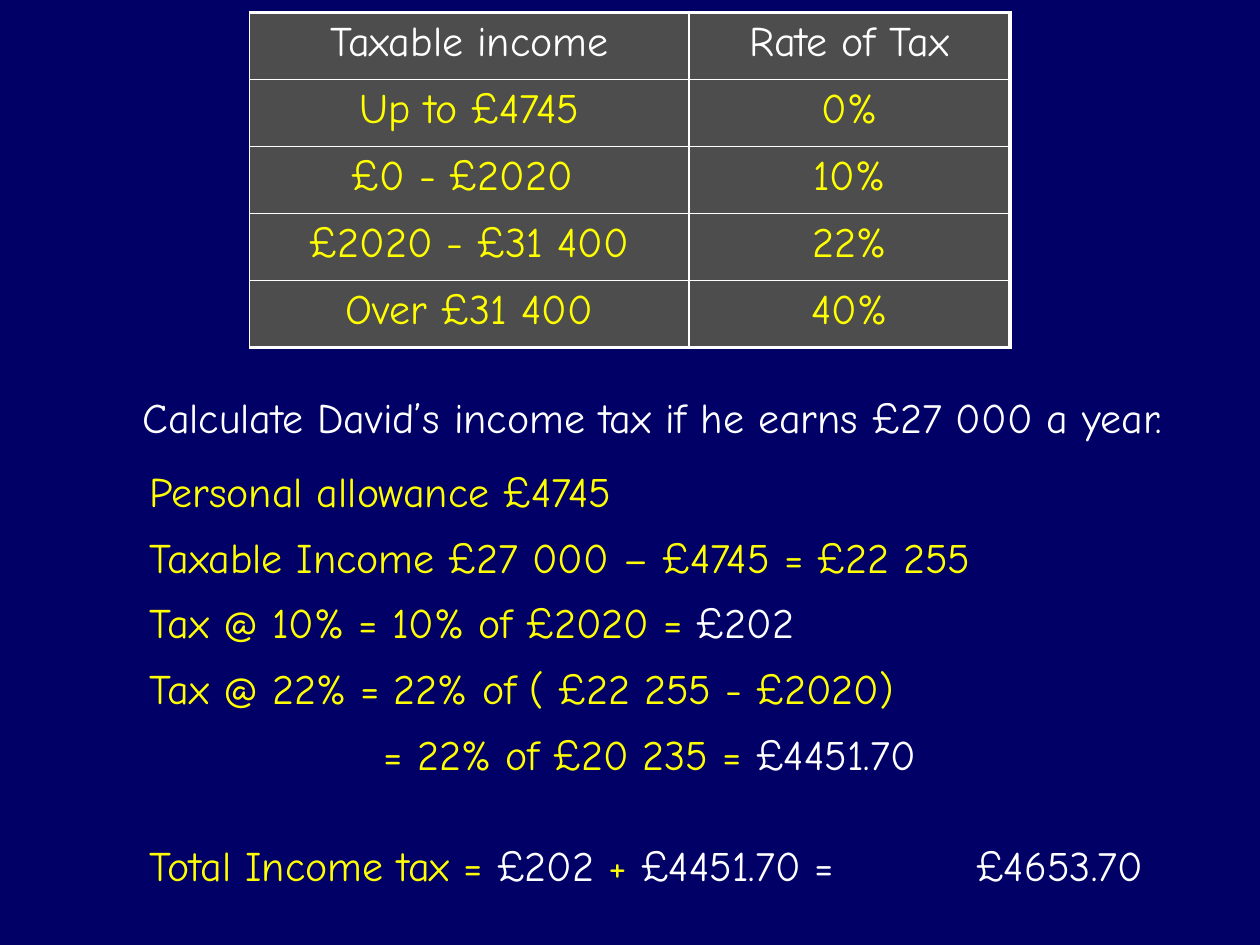
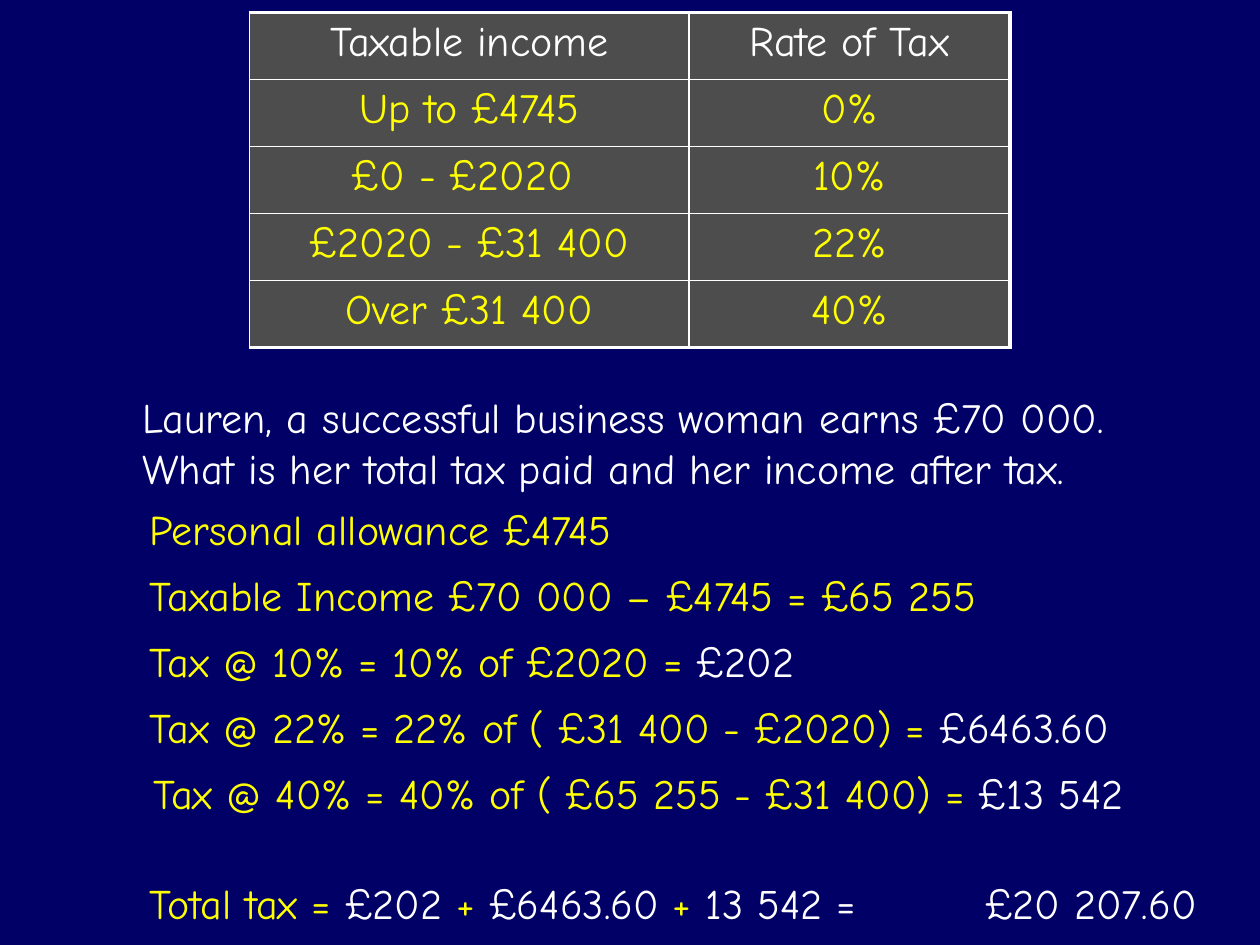
from typing import NamedTuple

from pptx import Presentation
from pptx.dml.color import RGBColor
from pptx.enum.text import MSO_AUTO_SIZE, PP_ALIGN
from pptx.oxml.ns import qn
from pptx.util import Cm, Pt
from lxml import etree

CENTER = PP_ALIGN.CENTER
LEFT = PP_ALIGN.LEFT
FIT_SHAPE = MSO_AUTO_SIZE.SHAPE_TO_FIT_TEXT

COLORS = {
    "background": "000066",
    "cell": "4D4D4D",
    "working": "FFFF00",
    "result": "FFFFFF",
}
FONT = "Comic Neue"

# Shared layout, in centimetres
TABLE_LEFT, TABLE_TOP, ROW_HEIGHT = 5.03, 0.25, 1.35
COLUMN_WIDTHS = (8.86, 6.47)
QUESTION_LEFT, QUESTION_TOP = 2.62, 7.77
STEP_LEFT, STEP_PITCH, TOTAL_OFFSET = 2.77, 1.33, 7.54
LINE_HEIGHT, EXTRA_LINE = 1.3, 1.01

THIN, THICK = 1, 2.25
TAX_BANDS = (
    ("Taxable income", "Rate of Tax"),
    ("Up to £4745", "0%"),
    ("£0 - £2020 ", "10%"),
    ("£2020 - £31 400", "22%"),
    ("Over £31 400", "40%"),
)


class Span(NamedTuple):
    text: str
    color: str = "working"


class Step(NamedTuple):
    width: float
    spans: tuple[Span, ...]
    left: float = STEP_LEFT


class Example(NamedTuple):
    question: tuple[str, ...]
    question_width: float
    first_step_top: float
    steps: tuple[Step, ...]
    total: Step
    answer: Step


ALLOWANCE = Step(11.07, (Span("Personal allowance £4745"),))
LOWER_BAND = Step(14.83, (Span("Tax @ 10% = 10% of £2020 = "), Span("£202", "result")))

EXAMPLES = (
    Example(
        question=("Calculate David’s income tax if he earns £27 000 a year.",),
        question_width=23.27,
        first_step_top=9.25,
        steps=(
            ALLOWANCE,
            Step(18.8, (Span("Taxable Income £27 000 – £4745 = £22 255"),)),
            LOWER_BAND,
            Step(17.73, (Span("Tax @ 22% = 22% of ( £22 255 - £2020)"),)),
            Step(13, (Span("= 22% of £20 235 = "), Span("£4451.70", "result")), left=7.49),
        ),
        total=Step(16.08, (
            Span("Total Income tax = "), Span("£202 ", "result"),
            Span("+ "), Span("£4451.70 =", "result"),
        )),
        answer=Step(4.52, (Span("£4653.70", "result"),), left=19.43),
    ),
    Example(
        question=(
            "Lauren, a successful business woman earns £70 000.",
            "What is her total tax paid and her income after tax.",
        ),
        question_width=21.41,
        first_step_top=10.03,
        steps=(
            ALLOWANCE,
            Step(18.8, (Span("Taxable Income £70 000 – £4745 = £65 255"),)),
            LOWER_BAND,
            Step(22.02, (
                Span("Tax @ 22% = 22% of ( £31 400 - £2020) = "), Span("£6463.60", "result"),
            )),
            Step(22.17, (
                Span("Tax @ 40% = 40% of ( £65 255 - £31 400) = "), Span("£13 542", "result"),
            ), left=2.84),
        ),
        total=Step(16.66, (
            Span("Total tax = "), Span("£202 ", "result"), Span("+ "),
            Span("£6463.60 ", "result"), Span("+"), Span(" 13 542 =", "result"),
        )),
        answer=Step(5.31, (Span("£20 207.60", "result"),), left=19.61),
    ),
)


def rgb(name: str) -> RGBColor:
    return RGBColor.from_string(COLORS[name])


def add_text(para, text: str, *, color: str, size: float = 24, align=LEFT) -> None:
    para.alignment = align
    run = para.add_run()
    run.text = text
    run.font.name = FONT
    run.font.size = Pt(size)
    run.font.color.rgb = rgb(color)


def add_lines(page, left: float, top: float, width: float,
              lines: tuple[tuple[Span, ...], ...]) -> None:
    """Draw an unwrapped text box with one paragraph per line."""
    height = LINE_HEIGHT + EXTRA_LINE * (len(lines) - 1)
    box = page.shapes.add_textbox(Cm(left), Cm(top), Cm(width), Cm(height))
    frame = box.text_frame
    frame.word_wrap = False
    frame.auto_size = FIT_SHAPE
    for index, spans in enumerate(lines):
        para = frame.add_paragraph() if index else frame.paragraphs[0]
        for span in spans:
            add_text(para, span.text, color=span.color)


def add_step(page, step: Step, top: float) -> None:
    add_lines(page, step.left, top, step.width, (step.spans,))


def set_borders(cell, widths: dict[str, float]) -> None:
    """Put the border lines ahead of the cell fill, as the schema requires."""
    properties = cell._tc.get_or_add_tcPr()
    for index, (side, width) in enumerate(widths.items()):
        line = etree.Element(qn(f"a:ln{side}"), w=str(int(Pt(width))))
        fill = etree.SubElement(line, qn("a:solidFill"))
        etree.SubElement(fill, qn("a:srgbClr"), val=COLORS["result"])
        properties.insert(index, line)


def add_tax_table(page) -> None:
    rows, columns = len(TAX_BANDS), len(COLUMN_WIDTHS)
    table = page.shapes.add_table(
        rows, columns, Cm(TABLE_LEFT), Cm(TABLE_TOP),
        Cm(sum(COLUMN_WIDTHS)), Cm(ROW_HEIGHT * rows),
    ).table
    table.first_row = table.horz_banding = False
    for column, width in zip(table.columns, COLUMN_WIDTHS):
        column.width = Cm(width)
    for row_index, band in enumerate(TAX_BANDS):
        table.rows[row_index].height = Cm(ROW_HEIGHT)
        for column_index, text in enumerate(band):
            cell = table.cell(row_index, column_index)
            cell.fill.solid()
            cell.fill.fore_color.rgb = rgb("cell")
            set_borders(cell, {
                "L": THIN,
                "R": THICK if column_index == columns - 1 else THIN,
                "T": THICK if row_index == 0 else THIN,
                "B": THICK if row_index == rows - 1 else THIN,
            })
            add_text(cell.text_frame.paragraphs[0], text, align=CENTER,
                     color="working" if row_index else "result")


def add_example(deck, example: Example) -> None:
    page = deck.slides.add_slide(deck.slide_layouts[6])
    page.background.fill.solid()
    page.background.fill.fore_color.rgb = rgb("background")
    add_tax_table(page)

    # Question
    question = tuple((Span(line, "result"),) for line in example.question)
    add_lines(page, QUESTION_LEFT, QUESTION_TOP, example.question_width, question)

    # Working, then the total and its answer on one line
    for index, step in enumerate(example.steps):
        add_step(page, step, example.first_step_top + index * STEP_PITCH)
    for step in (example.total, example.answer):
        add_step(page, step, example.first_step_top + TOTAL_OFFSET)


def main() -> None:
    deck = Presentation()
    deck.slide_width, deck.slide_height = Cm(25.4), Cm(19.05)
    for example in EXAMPLES:
        add_example(deck, example)
    deck.save("out.pptx")


if __name__ == "__main__":
    main()
